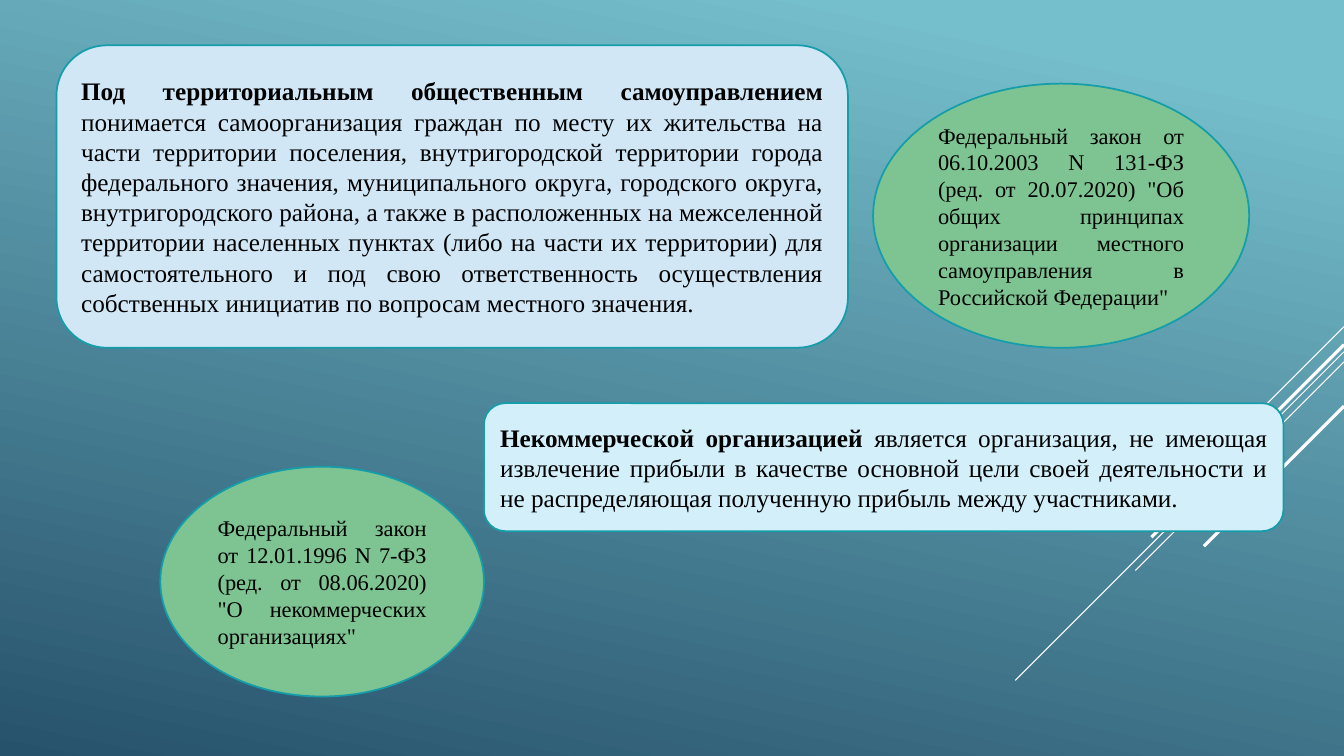
from lxml import etree
from pptx import Presentation
from pptx.dml.color import RGBColor
from pptx.enum.shapes import MSO_CONNECTOR, MSO_SHAPE
from pptx.enum.text import MSO_ANCHOR, PP_ALIGN
from pptx.oxml.ns import qn
from pptx.util import Inches, Pt

ROUND = MSO_SHAPE.ROUNDED_RECTANGLE
OVAL = MSO_SHAPE.OVAL
STRAIGHT = MSO_CONNECTOR.STRAIGHT
MIDDLE = MSO_ANCHOR.MIDDLE
JUSTIFY = PP_ALIGN.JUSTIFY

SKY = RGBColor(0x75, 0xBE, 0xCB)
NAVY = RGBColor(0x27, 0x52, 0x6C)
WHITE = RGBColor(0xFF, 0xFF, 0xFF)
BLACK = RGBColor(0, 0, 0)
TEAL = RGBColor(0x15, 0x9D, 0xA9)
GREEN = RGBColor(0x7E, 0xC4, 0x92)
PALE = RGBColor(0xD1, 0xE7, 0xF6)
ICE = RGBColor(0xD2, 0xEF, 0xFA)

FONT = "Times New Roman"
WIDTH, HEIGHT = 13.33, 7.5

# Diagonal rays: height at the right edge, length across, line width
RAYS = [
    (3.24, 1.0, 0.75),
    (3.49, 3.26, 0.75),
    (3.59, 2.07, 0.75),
    (3.42, 1.91, 2.25),
    (4.03, 1.39, 2.25),
]

# Cards: shape, box, fill, text size, (text, bold) runs
CARDS = [
    (ROUND, (0.56, 0.45, 7.85, 3), PALE, 18, [
        ("Под территориальным общественным самоуправлением ", True),
        ("понимается самоорганизация граждан по месту их жительства на части "
         "территории поселения, внутригородской территории города федерального "
         "значения, муниципального округа, городского округа, внутригородского "
         "района, а также в расположенных на межселенной территории населенных "
         "пунктах (либо на части их территории) для самостоятельного и под свою "
         "ответственность осуществления собственных инициатив по вопросам "
         "местного значения.", False)]),
    (OVAL, (8.66, 0.83, 3.73, 2.62), GREEN, 16, [
        ('Федеральный закон от 06.10.2003 N 131-ФЗ (ред. от 20.07.2020) "Об '
         "общих принципах организации местного самоуправления в Российской "
         'Федерации"', False)]),
    (ROUND, (4.8, 4, 7.93, 1.27), ICE, 18, [
        ("Некоммерческой организацией ", True),
        ("является организация, не имеющая извлечение прибыли в качестве "
         "основной цели своей деятельности и не распределяющая полученную "
         "прибыль между участниками.", False)]),
    (OVAL, (1.59, 4.63, 3.21, 2.28), GREEN, 16, [
        ("Федеральный закон от 12.01.1996 N 7-ФЗ (ред. от 08.06.2020) "
         '"О некоммерческих организациях"', False)]),
]


def paint_back(slide):
    fill = slide.background.fill
    fill.gradient()
    fill.gradient_angle = 258
    for stop, color, place in zip(fill.gradient_stops, (SKY, NAVY), (0.1, 1)):
        stop.color.rgb = color
        stop.position = place


def add_ray(slide, top, span, width):
    ray = slide.shapes.add_connector(
        STRAIGHT, Inches(WIDTH), Inches(top),
        Inches(WIDTH - span), Inches(top + span))
    ray.line.color.rgb = WHITE
    ray.line.width = Pt(width)
    etree.SubElement(ray._element.spPr, qn("a:effectLst"))


def add_card(slide, kind, box, color, size, runs):
    card = slide.shapes.add_shape(kind, *map(Inches, box))
    card.shadow.inherit = False
    card.fill.solid()
    card.fill.fore_color.rgb = color
    card.line.color.rgb = TEAL
    card.line.width = Pt(1.25)
    frame = card.text_frame
    frame.word_wrap = True
    frame.vertical_anchor = MIDDLE
    para = frame.paragraphs[0]
    para.alignment = JUSTIFY
    for text, bold in runs:
        run = para.add_run()
        run.text = text
        font = run.font
        font.name = FONT
        font.size = Pt(size)
        font.bold = bold
        font.color.rgb = BLACK


def main():
    deck = Presentation()
    deck.slide_width = Inches(WIDTH)
    deck.slide_height = Inches(HEIGHT)
    slide = deck.slides.add_slide(deck.slide_layouts[6])

    # Background and rays
    paint_back(slide)
    for ray in RAYS:
        add_ray(slide, *ray)

    # Definitions and laws
    for card in CARDS:
        add_card(slide, *card)

    deck.save("out.pptx")


if __name__ == "__main__":
    main()
